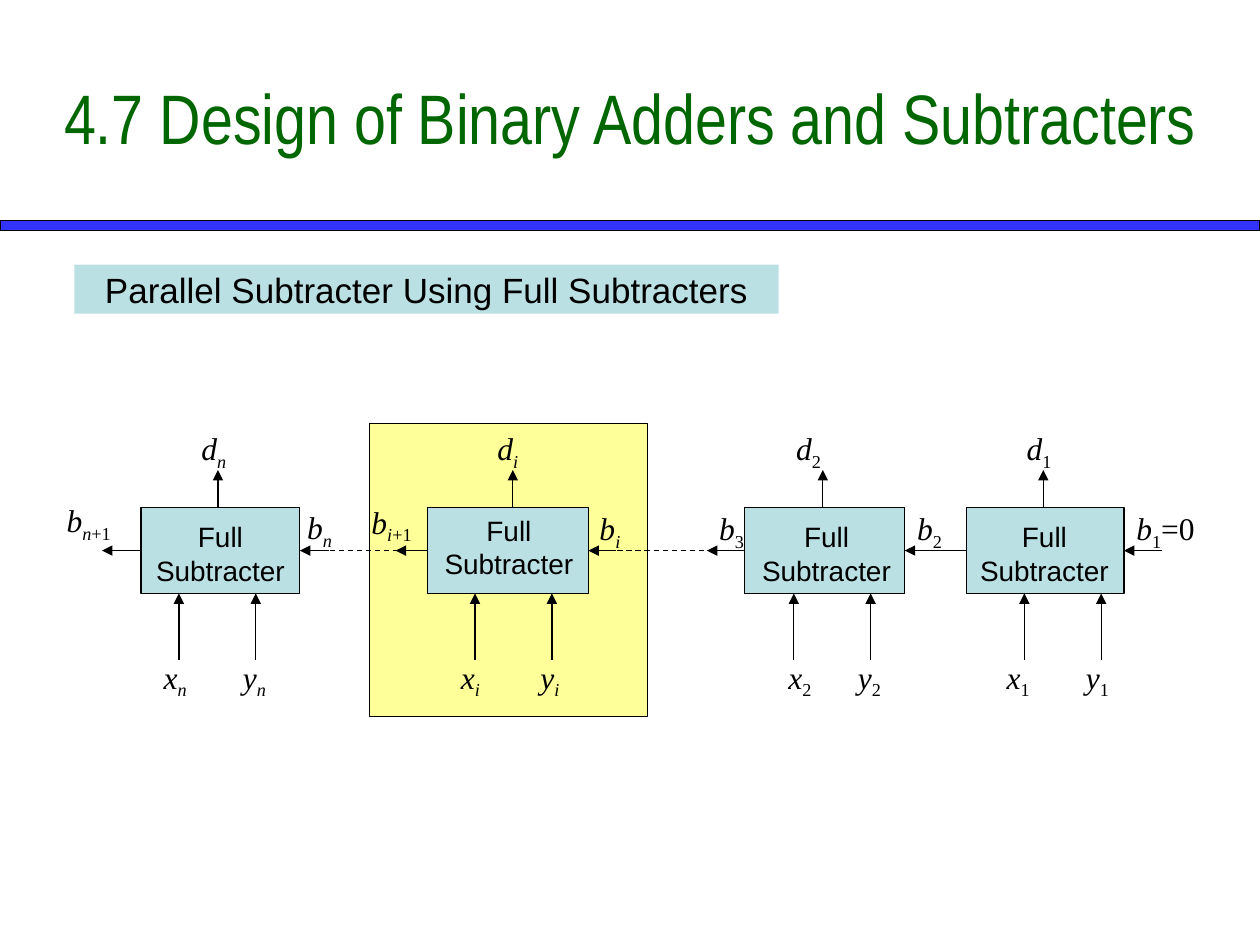
from dataclasses import dataclass

from lxml import etree
from pptx import Presentation
from pptx.dml.color import RGBColor
from pptx.enum.dml import MSO_LINE
from pptx.enum.shapes import MSO_CONNECTOR, MSO_SHAPE
from pptx.enum.text import MSO_ANCHOR, MSO_AUTO_SIZE, PP_ALIGN
from pptx.oxml.ns import qn
from pptx.util import Inches, Pt

RECT = MSO_SHAPE.RECTANGLE
STRAIGHT = MSO_CONNECTOR.STRAIGHT
DASH = MSO_LINE.DASH
MIDDLE, TOP = MSO_ANCHOR.MIDDLE, MSO_ANCHOR.TOP
CENTER, LEFT = PP_ALIGN.CENTER, PP_ALIGN.LEFT
NO_AUTOFIT = MSO_AUTO_SIZE.NONE
LEFT_SIDE, RIGHT_SIDE = 1, 3

BLACK, GREEN, BLUE = "000000", "006600", "3333FF"
TEAL, YELLOW = "BBE0E3", "FFFF99"

COLUMNS, ROWS = 100, 75
BOX_TOP, BOX_HEIGHT = 40.3, 6.8
BOX_BOTTOM = BOX_TOP + BOX_HEIGHT
WIRE_ROW = BOX_TOP + BOX_HEIGHT / 2
OUTPUT_ROW, INPUT_ROW = 37.3, 52.4
OUTPUT_LABEL_ROW, INPUT_LABEL_ROW = 33.6, 51.7
INPUT_GAP = 6.1
LABEL_WIDTH, LABEL_HEIGHT = 7.6, 4

prs = Presentation()
prs.slide_width, prs.slide_height = Inches(10), Inches(7.5)
s = prs.slides.add_slide(prs.slide_layouts[5])


@dataclass
class Stage:
    index: str
    left: float
    width: float
    name_left: float
    name_top: float
    d_wire: float
    x_wire: float
    d_label: float
    x_label: float
    y_label: float


@dataclass
class Borrow:
    index: str
    left: float
    top: float
    width: float = 4.6
    suffix: str = ""


STAGES = [
    Stage("n", 11.2, 12.6, 11.2, 40.7, 17.3, 14.2, 15, 12, 18.3),
    Stage("i", 33.9, 12.8, 34.1, 40.2, 40.7, 37.7, 38.5, 35.6, 41.9),
    Stage("2", 59.1, 12.7, 59.3, 40.7, 65.3, 63, 62.2, 61.6, 67.1),
    Stage("1", 76.7, 12.5, 76.6, 40.7, 82.8, 81.3, 80.5, 78.9, 85.2),
]
BORROWS = [
    Borrow("n+1", 4.3, 39.3, LABEL_WIDTH),
    Borrow("n", 23.4, 39.8),
    Borrow("i+1", 28.5, 39.4, LABEL_WIDTH),
    Borrow("i", 46.6, 39.9),
    Borrow("3", 56.1, 39.9),
    Borrow("2", 71.8, 39.9),
    Borrow("1", 89.2, 39.9, LABEL_WIDTH, "=0"),
]


def col(n: float) -> int:
    return round(prs.slide_width * n / COLUMNS)


def row(n: float) -> int:
    return round(prs.slide_height * n / ROWS)


def color(value: str) -> RGBColor:
    return RGBColor.from_string(value)


def style(r, font: str, size: float, value: str = BLACK, italic: bool = False) -> None:
    r.font.name, r.font.size, r.font.italic = font, Pt(size), italic
    r.font.color.rgb = color(value)


def set_text(sp, text: str, font: str, size: float, value: str = BLACK) -> None:
    tf = sp.text_frame
    tf.text = text
    tf.word_wrap = True
    tf.auto_size = NO_AUTOFIT
    tf.vertical_anchor = MIDDLE
    p = tf.paragraphs[0]
    p.alignment = CENTER
    style(p.runs[0], font, size, value)


def add_box(left: float, top: float, width: float, height: float, fill: str, outlined: bool = True):
    sp = s.shapes.add_shape(RECT, col(left), row(top), col(width), row(height))
    sp.shadow.inherit = False
    sp.fill.solid()
    sp.fill.fore_color.rgb = color(fill)
    if outlined:
        sp.line.color.rgb = color(BLACK)
        sp.line.width = Pt(0.75)
    else:
        sp.line.fill.background()
    return sp


def add_textbox(left: float, top: float, width: float, height: float):
    sp = s.shapes.add_textbox(col(left), row(top), col(width), row(height))
    sp.text_frame.word_wrap = True
    return sp


def add_wire(x1: float, y1: float, x2: float, y2: float, dashed: bool = False):
    line = s.shapes.add_connector(STRAIGHT, col(x1), row(y1), col(x2), row(y2))
    line.line.color.rgb = color(BLACK)
    line.line.width = Pt(0.75)
    if dashed:
        line.line.dash_style = DASH
    else:
        etree.SubElement(line.line._get_or_add_ln(), qn("a:tailEnd"), type="triangle")
    etree.SubElement(line._element.spPr, qn("a:effectLst"))
    return line


def add_symbol(left: float, top: float, width: float, letter: str, index: str, suffix: str = "") -> None:
    tf = add_textbox(left, top, width, LABEL_HEIGHT).text_frame
    tf.vertical_anchor = TOP
    p = tf.paragraphs[0]
    p.alignment = LEFT
    parts = [(letter, False), (index[0], True), (index[1:], True), (suffix, False)]
    for text, lowered in parts:
        if text:
            r = p.add_run()
            r.text = text
            style(r, "Times New Roman", 18, italic=text.isalpha())
            if lowered:
                r.font._element.set("baseline", "-25000")


def add_stage(stage: Stage):
    box = add_box(stage.left, BOX_TOP, stage.width, BOX_HEIGHT, TEAL)
    name = add_textbox(stage.name_left, stage.name_top, 12.6, 6.4)
    set_text(name, "Full Subtracter", "Arial", 16)
    add_wire(stage.d_wire, BOX_TOP, stage.d_wire, OUTPUT_ROW)
    for x in (stage.x_wire, stage.x_wire + INPUT_GAP):
        add_wire(x, INPUT_ROW, x, BOX_BOTTOM)
    add_symbol(stage.d_label, OUTPUT_LABEL_ROW, LABEL_WIDTH, "d", stage.index)
    add_symbol(stage.x_label, INPUT_LABEL_ROW, LABEL_WIDTH, "x", stage.index)
    add_symbol(stage.y_label, INPUT_LABEL_ROW, LABEL_WIDTH, "y", stage.index)
    return box


def add_borrow_in(box, start: float) -> None:
    add_wire(start, WIRE_ROW, start - 1, WIRE_ROW).end_connect(box, RIGHT_SIDE)


def add_borrow_out(box, end: float) -> None:
    add_wire(end + 1, WIRE_ROW, end, WIRE_ROW).begin_connect(box, LEFT_SIDE)


add_box(0, 17.5, COLUMNS, 0.8, BLUE)
title = s.shapes.title
title.left, title.top, title.width, title.height = col(0), row(3), col(COLUMNS), row(12.5)
set_text(title, "4.7 Design of Binary Adders and Subtracters", "Arial Narrow", 40, GREEN)
heading = add_box(5.9, 21, 55.9, 3.9, TEAL, outlined=False)
set_text(heading, "Parallel Subtracter Using Full Subtracters", "Arial", 20)

add_box(29.3, 33.6, 22.1, 23.3, YELLOW)
box_n, box_i, box_2, box_1 = [add_stage(stage) for stage in STAGES]

for box, start in ((box_n, 26.1), (box_i, 48.9), (box_1, 92.2)):
    add_borrow_in(box, start)
for box, end in ((box_n, 8.1), (box_i, 31.4), (box_2, 56.1)):
    add_borrow_out(box, end)
link = add_wire(76.7, WIRE_ROW, 71.8, WIRE_ROW)
link.begin_connect(box_1, LEFT_SIDE)
link.end_connect(box_2, RIGHT_SIDE)
for start, end in ((26.2, 31.7), (49, 56.1)):
    add_wire(start, WIRE_ROW, end, WIRE_ROW, dashed=True)

for b in BORROWS:
    add_symbol(b.left, b.top, b.width, "b", b.index, b.suffix)

prs.save("out.pptx")
